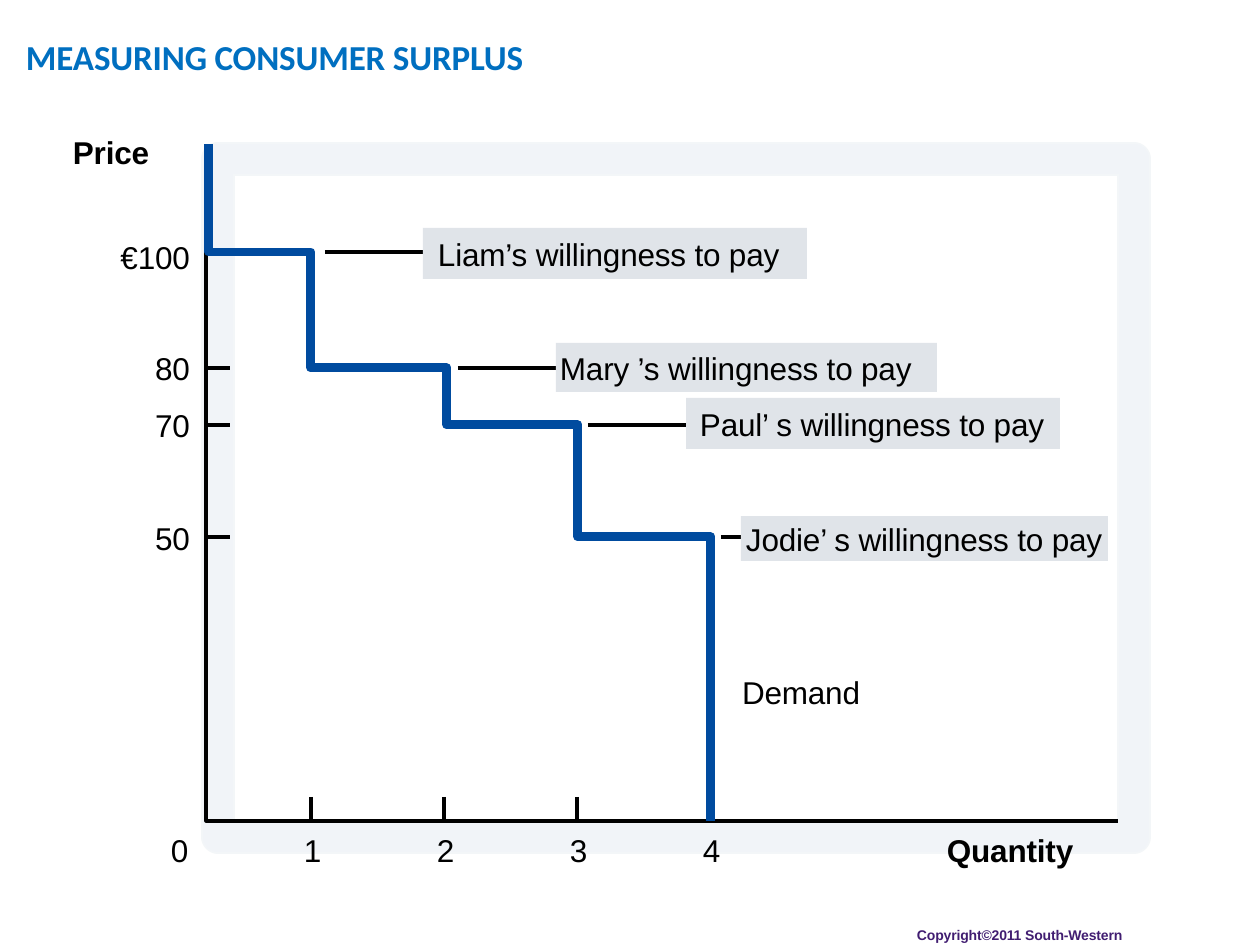
import pptx
import pptx.util
import pptx.dml.color
import pptx.enum.shapes
import pptx.enum.text
import pptx.oxml.ns
from dataclasses import dataclass
from lxml import etree

PX = 914400 / 126
ALIGN = pptx.enum.text.PP_ALIGN
SHAPES = pptx.enum.shapes.MSO_SHAPE


@dataclass(frozen=True)
class Theme:
    title: str = "006FC0"
    ink: str = "000000"
    demand: str = "004B9F"
    label: str = "E0E4E9"
    frame_outer: str = "F3F6F8"
    frame_inner: str = "F1F4F8"
    credit: str = "411D71"
    title_font: str = "Calibri"
    body_font: str = "Arial"
    title_size: int = 20
    body_size: int = 18
    credit_size: int = 8


THEME = Theme()


def px(length):
    return pptx.util.Emu(round(length * PX))


def rgb(value):
    return pptx.dml.color.RGBColor.from_string(value)


def style_line(line, color, width):
    line.color.rgb = rgb(color)
    line.width = pptx.util.Pt(width)


def set_text(shape, text, size, color=THEME.ink, font=THEME.body_font, bold=False,
             align=ALIGN.LEFT, left_inset=1, top_inset=0,
             anchor=pptx.enum.text.MSO_ANCHOR.MIDDLE):
    frame = shape.text_frame
    frame.text = text
    frame.word_wrap = True
    frame.auto_size = pptx.enum.text.MSO_AUTO_SIZE.NONE
    frame.vertical_anchor = anchor
    frame.margin_left, frame.margin_top = px(left_inset), px(top_inset)
    frame.margin_right = frame.margin_bottom = 0
    para = frame.paragraphs[0]
    para.alignment = align
    for span in para.runs:
        span.font.name = font
        span.font.size = pptx.util.Pt(size)
        span.font.bold = bold
        span.font.color.rgb = rgb(color)
        span.font._element.set("spc", "-10")


def add_title(page, text):
    title = page.shapes.title
    title.left, title.top, title.width, title.height = px(25), px(15), px(556), px(89)
    set_text(title, text, THEME.title_size, THEME.title, THEME.title_font, True,
             top_inset=21, anchor=pptx.enum.text.MSO_ANCHOR.TOP)


def add_text(page, text, left, middle, width, height=42, size=THEME.body_size, **style):
    box = page.shapes.add_textbox(px(left), px(middle - height / 2), px(width), px(height))
    set_text(box, text, size, **style)


def add_box(page, left, top, width, height):
    box = page.shapes.add_shape(SHAPES.RECTANGLE, px(left), px(top), px(width), px(height))
    box.shadow.inherit = False
    return box


def add_frame(page, color, width):
    frame = add_box(page, 218, 159, 916, 678)
    frame.fill.background()
    style_line(frame.line, color, width)


def add_label(page, text, left, top, width, height, inset):
    label = add_box(page, left, top, width, height)
    label.fill.solid()
    label.fill.fore_color.rgb = rgb(THEME.label)
    label.line.fill.background()
    set_text(label, text, THEME.body_size, left_inset=inset)


def add_line(page, x1, y1, x2, y2):
    line = page.shapes.add_connector(
        pptx.enum.shapes.MSO_CONNECTOR.STRAIGHT, px(x1), px(y1), px(x2), px(y2))
    style_line(line.line, THEME.ink, 1.75)
    etree.SubElement(line._element.spPr, pptx.oxml.ns.qn("a:effectLst"))


def add_path(page, points, color, width):
    builder = page.shapes.build_freeform(*points[0], scale=PX)
    builder.add_line_segments(points[1:], close=False)
    path = builder.convert_to_shape()
    path.shadow.inherit = False
    path.fill.background()
    style_line(path.line, color, width)


def add_axes(page):
    left, top, right, bottom = 206, 144, 1118, 821
    add_path(page, [(left, top), (left, bottom), (right, bottom)], THEME.ink, 1.75)
    for text, level, middle in [("€100", 252, 257), ("80", 368, 368),
                                ("70", 425, 425), ("50", 537, 538)]:
        add_line(page, left, level, left + 24, level)
        add_text(page, text, 110, middle, 80, align=ALIGN.RIGHT)
    for quantity in range(1, 5):
        x = 178 + 133 * quantity
        add_line(page, x, bottom - 24, x, bottom)
        add_text(page, str(quantity), x - 8, 850, 21)
    add_text(page, "0", 170, 850, 21)
    add_text(page, "Price", 72, 152, 90, bold=True)
    add_text(page, "Quantity", 946, 850, 140, bold=True)


def add_demand(page):
    steps = [(311, 252), (447, 368), (578, 425), (711, 537)]
    points = [(209, 144)]
    for x, level in steps:
        points += [(points[-1][0], level), (x, level)]
    points.append((711, 821))
    add_path(page, points, THEME.demand, 5.12)
    add_text(page, "Demand", 741, 692, 130)


def main():
    deck = pptx.Presentation()
    deck.slide_width, deck.slide_height = px(1260), px(945)
    page = deck.slides.add_slide(deck.slide_layouts[5])
    add_title(page, "MEASURING CONSUMER SURPLUS")
    add_frame(page, THEME.frame_outer, 19)
    add_frame(page, THEME.frame_inner, 17.25)
    add_axes(page)
    add_demand(page)
    for text, start, level, left, top, width, height, inset in [
        ("Liam’s willingness to pay", 325, 252, 423, 228, 384, 51, 15),
        ("Mary ’s willingness to pay", 458, 368, 556, 343, 381, 49, 4),
        ("Paul’ s willingness to pay", 588, 425, 686, 398, 374, 51, 14),
        ("Jodie’ s willingness to pay", 721, 537, 741, 516, 367, 45, 5),
    ]:
        add_line(page, start, level, left, level)
        add_label(page, text, left, top, width, height, inset)
    add_text(page, "Copyright©2011 South-Western", 916, 935, 225, 20,
             THEME.credit_size, color=THEME.credit, bold=True)
    deck.save("out.pptx")


if __name__ == "__main__":
    main()
